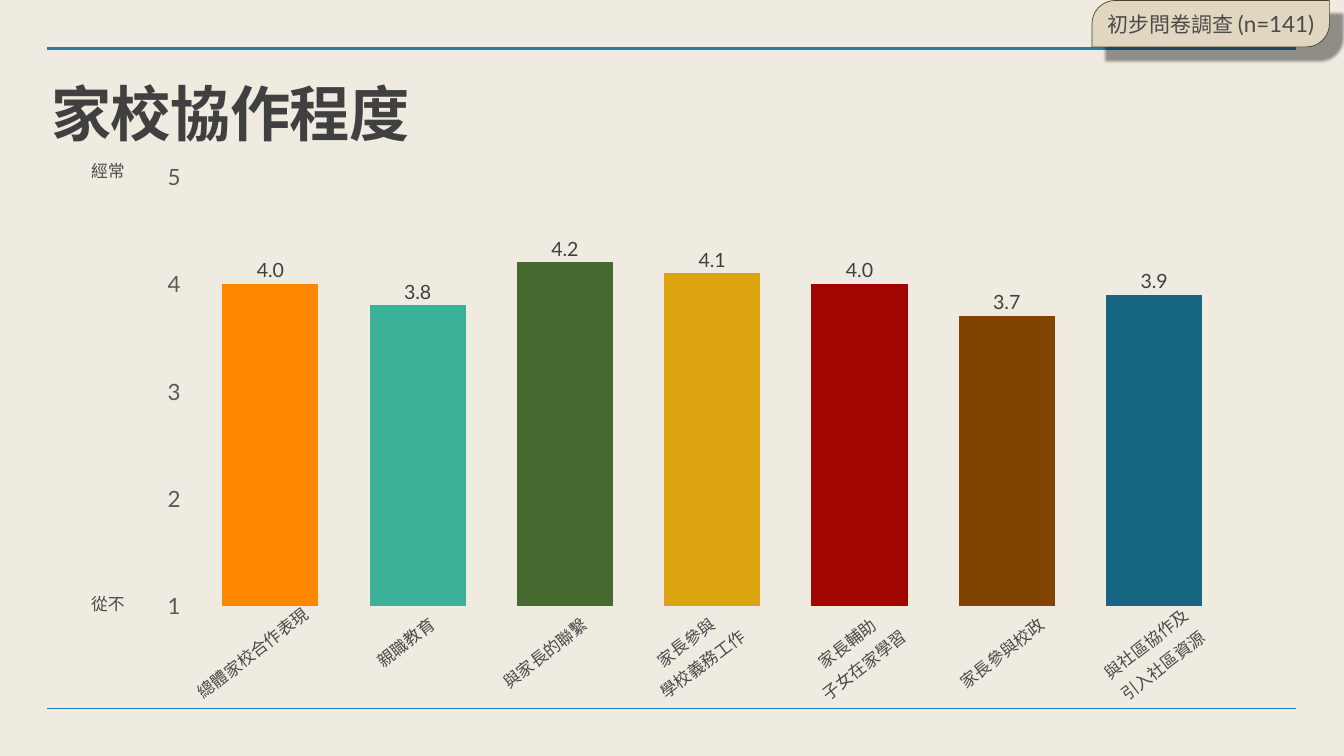
from lxml import etree
from pptx import Presentation
from pptx.chart.data import CategoryChartData
from pptx.dml.color import RGBColor
from pptx.enum.chart import XL_CHART_TYPE, XL_LABEL_POSITION, XL_TICK_MARK
from pptx.enum.shapes import MSO_CONNECTOR, MSO_SHAPE
from pptx.enum.text import MSO_ANCHOR, MSO_AUTO_SIZE, PP_ALIGN
from pptx.oxml import parse_xml
from pptx.oxml.ns import nsdecls, qn
from pptx.util import Inches, Pt

COLUMNS = XL_CHART_TYPE.COLUMN_CLUSTERED
OUTSIDE_END = XL_LABEL_POSITION.OUTSIDE_END
NO_TICK = XL_TICK_MARK.NONE
STRAIGHT = MSO_CONNECTOR.STRAIGHT
ROUND_DIAGONAL = MSO_SHAPE.ROUND_2_DIAG_RECTANGLE
TOP, MIDDLE = MSO_ANCHOR.TOP, MSO_ANCHOR.MIDDLE
FIT_SHAPE, NO_FIT = MSO_AUTO_SIZE.SHAPE_TO_FIT_TEXT, MSO_AUTO_SIZE.NONE
LEFT, CENTER = PP_ALIGN.LEFT, PP_ALIGN.CENTER

INK, DARK, RULE_BLUE = "4A4A4B", "404040", "227AAF"
INSET = 0.06

DIMENSIONS = [
    (["總體家校合作表現"], 4.0, "FF8700", 5.01, 12.96, 322.2),
    (["親職教育"], 3.8, "3BB297", 8.05, 12.75, 322.2),
    (["與家長的聯繫"], 4.2, "466930", 10.82, 12.96, 322.2),
    (["家長參與", "學校義務工作"], 4.1, "DCA510", 13.78, 12.96, 322.8),
    (["家長輔助", "子女在家學習"], 4.0, "A00500", 16.98, 12.98, 322.2),
    (["家長參與校政"], 3.7, "804400", 19.89, 12.96, 322.2),
    (["與社區協作及", "引入社區資源"], 3.9, "176682", 22.91, 12.99, 322.2),
]


def rgb(value):
    return RGBColor.from_string(value)


def style_font(font, size, color, name="Lato", bold=False):
    font.size, font.name, font.bold = Pt(size), name, bold
    font.color.rgb = rgb(color)


def write_text(shape, lines, color=INK, name="Arial", bold=False, align=CENTER,
               anchor=MIDDLE, wrap=False, fit=FIT_SHAPE, before=10,
               line_spacing=None, tracking=None):
    frame = shape.text_frame
    frame.word_wrap, frame.auto_size, frame.vertical_anchor = wrap, fit, anchor
    frame.margin_left = frame.margin_right = Inches(INSET)
    frame.margin_top = frame.margin_bottom = Inches(INSET)
    for index, runs in enumerate(lines):
        paragraph = frame.add_paragraph() if index else frame.paragraphs[0]
        paragraph.alignment = align
        paragraph.space_before = Pt(before)
        paragraph.line_spacing = line_spacing
        for words, size in runs:
            run = paragraph.add_run()
            run.text = words
            style_font(run.font, size, color, name, bold)
            if tracking:
                run.font._element.set("spc", str(tracking))


def add_rule(slide, left, top, width, weight):
    rule = slide.shapes.add_connector(STRAIGHT, Inches(left), Inches(top),
                                      Inches(left + width), Inches(top))
    rule.line.color.rgb = rgb(RULE_BLUE)
    rule.line.width = Pt(weight)
    etree.SubElement(rule._element.spPr, qn("a:effectLst"))


def add_title(slide, left, top, width, height):
    title = slide.shapes.add_textbox(*map(Inches, (left, top, width, height)))
    write_text(title, [[("家校協作程度", 86)]], color=DARK, bold=True, align=LEFT,
               anchor=TOP, wrap=True, fit=NO_FIT, before=0, line_spacing=0.8,
               tracking=-90)


def add_label(slide, lines, center_x, center_y, rotation=0):
    width = max(map(len, lines)) / 3 + 2 * INSET
    height = 0.66 + 0.54 * (len(lines) - 1)
    label = slide.shapes.add_textbox(Inches(center_x - width / 2),
                                     Inches(center_y - height / 2),
                                     Inches(width), Inches(height))
    label.rotation = rotation
    write_text(label, [[(line, 24)] for line in lines])


def set_plot_layout(chart, **fractions):
    plot_area = chart._chartSpace.chart.plotArea
    for layout in plot_area.findall(qn("c:layout")):
        plot_area.remove(layout)
    sizes = "".join(f'<c:{key} val="{value}"/>' for key, value in fractions.items())
    plot_area.insert(0, parse_xml(
        f'<c:layout {nsdecls("c")}><c:manualLayout><c:layoutTarget val="inner"/>'
        f'<c:xMode val="edge"/><c:yMode val="edge"/>{sizes}'
        '</c:manualLayout></c:layout>'))


def add_score_chart(slide, left, top, width, height):
    scores = CategoryChartData(number_format="0.0")
    scores.categories = ["1"]
    for number, (_, score, *_) in enumerate(DIMENSIONS, 1):
        scores.add_series(f"Series {number}", [score])
    chart = slide.shapes.add_chart(
        COLUMNS, *map(Inches, (left, top, width, height)), scores).chart
    chart.has_legend = chart.has_title = False
    style_font(chart.font, 24, "000000")
    set_plot_layout(chart, x=0.037, y=0.05, w=0.918, h=0.829)

    chart.category_axis.visible = False
    axis = chart.value_axis
    axis.minimum_scale, axis.maximum_scale, axis.major_unit = 1, 5, 1
    axis.has_major_gridlines = False
    axis.major_tick_mark = axis.minor_tick_mark = NO_TICK
    axis.format.line.fill.background()
    axis.tick_labels.number_format = "0"
    axis.tick_labels.number_format_is_linked = False
    style_font(axis.tick_labels.font, 32, "595959")

    plot = chart.plots[0]
    plot.vary_by_categories = False
    plot.gap_width, plot.overlap = 82, -53
    for series, (_, _, color, *_) in zip(plot.series, DIMENSIONS):
        series.format.fill.solid()
        series.format.fill.fore_color.rgb = rgb(color)
        labels = series.data_labels
        labels.show_value = True
        labels.position = OUTSIDE_END
        labels.number_format = "0.0"
        labels.number_format_is_linked = False
        style_font(labels.font, 28, DARK)


def add_survey_tag(slide, left, top, width, height):
    tag = slide.shapes.add_shape(ROUND_DIAGONAL,
                                 *map(Inches, (left, top, width, height)))
    tag.adjustments[0], tag.adjustments[1] = 0.5, 0
    tag.fill.solid()
    tag.fill.fore_color.rgb = rgb("E1D7C1")
    tag.line.color.rgb = rgb("4E4226")
    tag.line.width = Pt(1)
    tag._element.spPr.append(parse_xml(
        f'<a:effectLst {nsdecls("a")}><a:outerShdw blurRad="{Pt(4)}" '
        f'dist="{Pt(27)}" dir="2700000" algn="tl" rotWithShape="0">'
        '<a:srgbClr val="000000"><a:alpha val="40000"/></a:srgbClr>'
        '</a:outerShdw></a:effectLst>'))
    write_text(tag, [[("初步問卷調查 ", 30), ("(n=141)", 32)]],
               name="Lato", wrap=True, before=0)


def main():
    deck = Presentation()
    deck.slide_width, deck.slide_height = Inches(26.67), Inches(15)
    slide = deck.slides.add_slide(deck.slide_layouts[6])
    slide.background.fill.solid()
    slide.background.fill.fore_color.rgb = rgb("F0EBE0")

    add_rule(slide, 0.94, 0.97, 24.78, 4)
    add_rule(slide, 0.94, 14.06, 24.78, 1)
    add_title(slide, 0.96, 1.73, 22.89, 3.53)
    add_score_chart(slide, 2.78, 2.99, 22.89, 10.28)
    for lines, _, _, center_x, center_y, rotation in DIMENSIONS:
        add_label(slide, lines, center_x, center_y, rotation)
    add_label(slide, ["從不"], 2.14, 11.99)
    add_label(slide, ["經常"], 2.14, 3.38)
    add_survey_tag(slide, 21.67, 0.01, 4.71, 0.92)
    deck.save("out.pptx")


if __name__ == "__main__":
    main()
